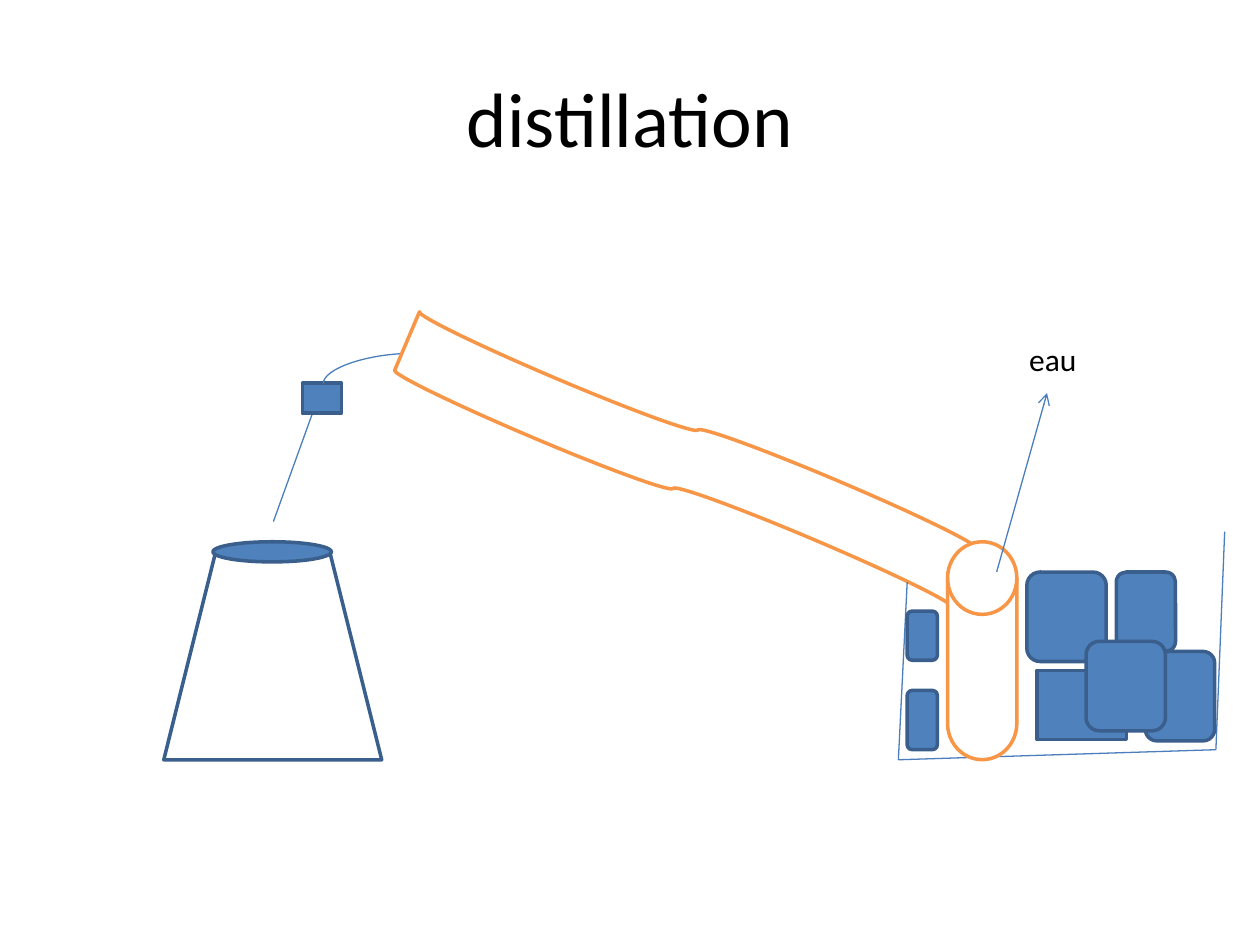
"""Build the distillation diagram slide."""
from itertools import pairwise

from lxml import etree
from pptx import Presentation
from pptx import util as u
from pptx.dml.color import RGBColor
from pptx.enum import shapes, text
from pptx.oxml.ns import qn

COLORS = {"ink": "000000", "paper": "FFFFFF", "blue": "4F81BD",
          "edge": "3A5F8C", "thin": "4B7EBC", "orange": "F79646"}
KIND = shapes.MSO_SHAPE
TITLE = {"text": "distillation", "at": (0.5, 0.3, 9, 1.25), "size": 44}
LABEL = {"text": "eau", "at": (8.07, 2.65, 0.58, 0.4), "size": 18}

FLASK = [(KIND.TRAPEZOID, (1.3, 4.38, 1.73, 1.65), None, "edge", 0),
         (KIND.OVAL, (1.69, 4.3, 0.94, 0.16), "blue", "edge", 0)]
NECK = [(2.17, 4.14), (2.48, 3.28)]
VALVE = [(KIND.RECTANGLE, (2.4, 3.04, 0.31, 0.24), "blue", "edge", 0)]
HOSE = [(3.04, 3.28), (2.8, 2.57)]
TUBE = [(KIND.FLOWCHART_PUNCHED_TAPE, (3.04, 3.33, 4.8, 0.63), "paper", "orange", 23)]
BASIN = [(7.2, 4.62), (7.13, 6.03), (9.65, 5.95), (9.72, 4.22)]
CYLINDER = [(KIND.FLOWCHART_MAGNETIC_DISK, (7.52, 4.3, 0.55, 1.73), "paper", "orange", 0)]
ICE_BLOCK = [(KIND.RECTANGLE, (8.23, 5.32, 0.71, 0.55), "blue", "edge", 0)]
ICE_CUBES = [(KIND.ROUNDED_RECTANGLE, at, "blue", "edge", 0) for at in (
    (8.15, 4.54, 0.63, 0.71), (9.09, 5.17, 0.55, 0.71), (8.86, 4.54, 0.47, 0.63),
    (7.2, 5.48, 0.24, 0.47), (7.2, 4.85, 0.24, 0.39), (8.62, 5.09, 0.63, 0.71))]
WATER_ARROW = [(7.91, 4.54), (8.31, 3.12)]


def color(name):
    return RGBColor.from_string(COLORS[name])


def inches(values):
    return [u.Inches(value) for value in values]


def draw_shapes(page, parts):
    for kind, at, fill, line, turn in parts:
        shape = page.shapes.add_shape(kind, *inches(at))
        shape.shadow.inherit = False
        shape.rotation = turn
        if fill:
            shape.fill.solid()
            shape.fill.fore_color.rgb = color(fill)
        else:
            shape.fill.background()
        shape.line.color.rgb = color(line)
        shape.line.width = u.Pt(2)


def draw_line(page, start, end, kind=shapes.MSO_CONNECTOR.STRAIGHT):
    line = page.shapes.add_connector(kind, *inches(start + end))
    line.line.color.rgb = color("thin")
    line.line.width = u.Pt(0.75)
    etree.SubElement(line._element.spPr, qn("a:effectLst"))
    return line


def draw_hose(page):
    properties = draw_line(page, *HOSE, shapes.MSO_CONNECTOR.CURVE)._element.spPr
    properties.find(qn("a:xfrm")).set("rot", str(90 * 60000))
    properties.find(qn("a:prstGeom")).set("prst", "curvedConnector2")


def write(box, content, align, anchor, wrap):
    box.left, box.top, box.width, box.height = inches(content["at"])
    frame = box.text_frame
    frame.text = content["text"]
    frame.word_wrap = wrap
    frame.vertical_anchor = anchor
    para = frame.paragraphs[0]
    para.alignment = align
    font = para.runs[0].font
    for key, value in {"name": "Calibri", "size": u.Pt(content["size"])}.items():
        setattr(font, key, value)
    font.color.rgb = color("ink")


def main():
    deck = Presentation()
    deck.slide_width, deck.slide_height = inches((10, 7.5))
    page = deck.slides.add_slide(deck.slide_layouts[5])
    write(page.shapes.title, TITLE, text.PP_ALIGN.CENTER, text.MSO_ANCHOR.MIDDLE, True)
    draw_shapes(page, FLASK)
    draw_line(page, *NECK)
    draw_shapes(page, VALVE)
    draw_hose(page)
    draw_shapes(page, TUBE)
    for start, end in pairwise(BASIN):
        draw_line(page, start, end)
    draw_shapes(page, CYLINDER + ICE_BLOCK + ICE_CUBES)
    arrow = draw_line(page, *WATER_ARROW)
    etree.SubElement(arrow.line._get_or_add_ln(), qn("a:tailEnd"), type="arrow")
    label = page.shapes.add_textbox(*inches(LABEL["at"]))
    write(label, LABEL, text.PP_ALIGN.LEFT, text.MSO_ANCHOR.TOP, False)
    label.text_frame.auto_size = text.MSO_AUTO_SIZE.SHAPE_TO_FIT_TEXT
    deck.save("out.pptx")


if __name__ == "__main__":
    main()
